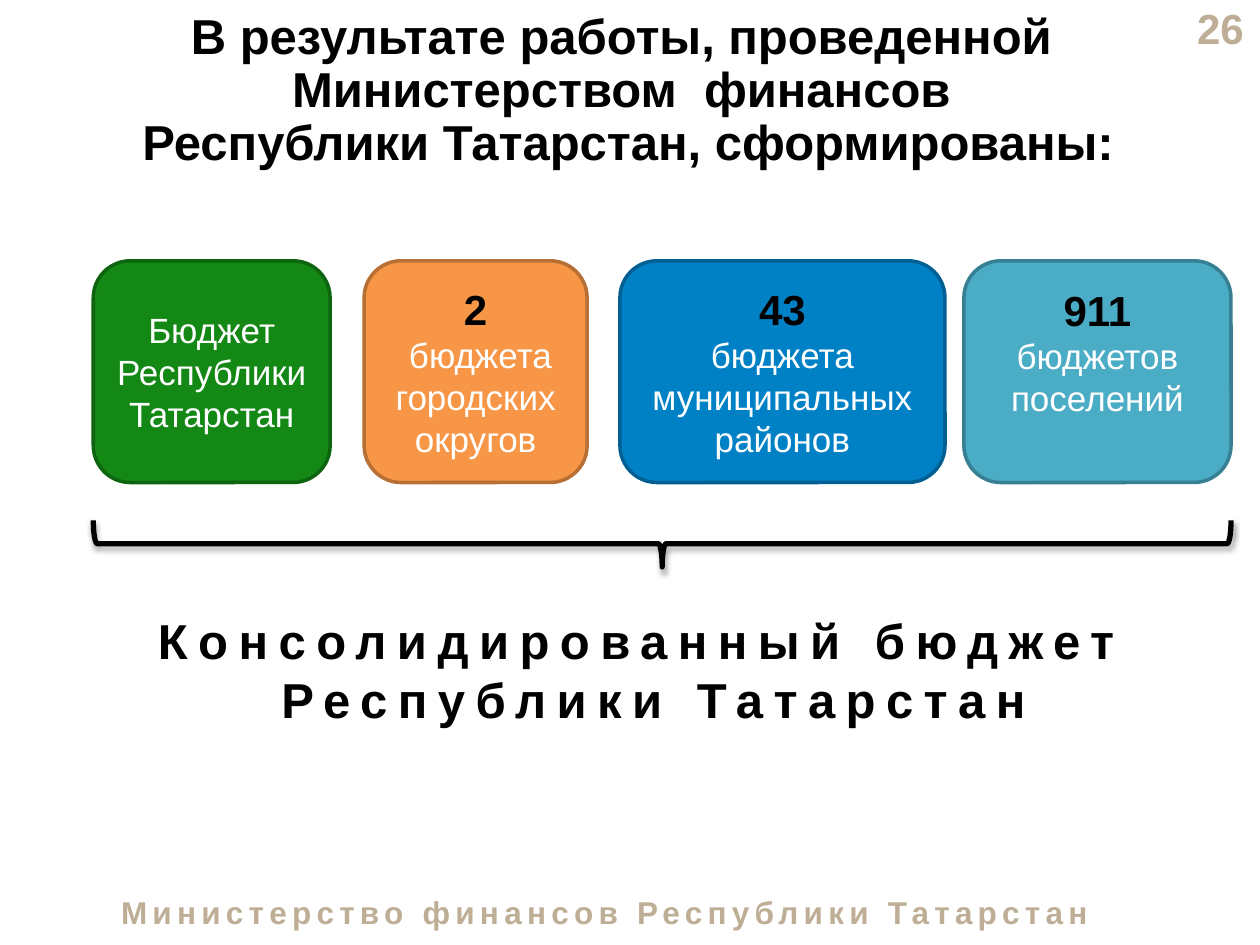
import pptx
import pptx.util
import pptx.dml.color
import pptx.enum.shapes
import pptx.enum.text
from lxml import etree

Inches = pptx.util.Inches
Pt = pptx.util.Pt
RGBColor = pptx.dml.color.RGBColor
Shape = pptx.enum.shapes.MSO_SHAPE
Align = pptx.enum.text.PP_ALIGN
Anchor = pptx.enum.text.MSO_ANCHOR

BLACK = RGBColor(0x00, 0x00, 0x00)
WHITE = RGBColor(0xFF, 0xFF, 0xFF)
SAND = RGBColor(0xBF, 0xAE, 0x96)
GREEN = RGBColor(0x13, 0x88, 0x15)
DARK_GREEN = RGBColor(0x0E, 0x65, 0x10)
ORANGE = RGBColor(0xF7, 0x96, 0x46)
DARK_ORANGE = RGBColor(0xB7, 0x6F, 0x34)
BLUE = RGBColor(0x00, 0x81, 0xC5)
DARK_BLUE = RGBColor(0x00, 0x5F, 0x92)
TEAL = RGBColor(0x4B, 0xAC, 0xC6)
DARK_TEAL = RGBColor(0x37, 0x7F, 0x92)

# Content
PAGE_NUMBER = "26"
FOOTER = "Министерство финансов Республики Татарстан"
TITLE = ("В результате работы, проведенной \nМинистерством  финансов \n"
         "Республики Татарстан, сформированы:")
TOTAL = "Консолидированный бюджет \nРеспублики Татарстан"

# Budgets: count, label, left, width, fill, outline, bottom margin
BUDGETS = [
    ("", "Бюджет Республики Татарстан", 0.74, 1.88, GREEN, DARK_GREEN, 0.05),
    ("2", " бюджета\nгородских округов", 2.89, 1.77, ORANGE, DARK_ORANGE, 0.05),
    ("43", "бюджета\nмуниципальных районов", 4.92, 2.58, BLUE, DARK_BLUE, 0.05),
    ("911", "бюджетов\nпоселений", 7.65, 2.12, TEAL, DARK_TEAL, 0.37),
]
BUDGET_TOP, BUDGET_HEIGHT = 2.07, 1.76
BRACE_TOP, BRACE_DEPTH = 4.13, 0.37

SHADOW = """<a:effectLst xmlns:a="http://schemas.openxmlformats.org/drawingml/2006/main">
<a:outerShdw blurRad="39370" dist="22860" dir="5400000" rotWithShape="0">
<a:srgbClr val="000000"><a:alpha val="35000"/></a:srgbClr></a:outerShdw></a:effectLst>"""


def write(paragraph, text, size=20, color=BLACK, bold=True, spacing=0,
          align=Align.CENTER, line_spacing=None):
    paragraph.alignment = align
    if line_spacing:
        paragraph.line_spacing = line_spacing
    for index, line in enumerate(text.split("\n")):
        if index:
            paragraph.add_line_break()
        run = paragraph.add_run()
        run.text = line
        run.font.name = "Arial"
        run.font.size = Pt(size)
        run.font.bold = bold
        run.font.color.rgb = color
        if spacing:
            run.font._element.set("spc", str(spacing * 100))


def add_text(slide, text, left, top, width, height, wrap=True,
             anchor=Anchor.TOP, **text_format):
    box = slide.shapes.add_textbox(Inches(left), Inches(top), Inches(width), Inches(height))
    box.text_frame.word_wrap = wrap
    box.text_frame.vertical_anchor = anchor
    write(box.text_frame.paragraphs[0], text, **text_format)


def add_budget(slide, count, label, left, width, fill, outline, bottom_margin):
    shape = slide.shapes.add_shape(Shape.ROUNDED_RECTANGLE, Inches(left), Inches(BUDGET_TOP),
                                   Inches(width), Inches(BUDGET_HEIGHT))
    shape.shadow.inherit = False
    shape.fill.solid()
    shape.fill.fore_color.rgb = fill
    shape.line.color.rgb = outline
    shape.line.width = Pt(2)
    frame = shape.text_frame
    frame.word_wrap = True
    frame.vertical_anchor = Anchor.MIDDLE
    frame.margin_bottom = Inches(bottom_margin)
    paragraph = frame.paragraphs[0]
    if count:
        write(paragraph, count, size=24)
        paragraph = frame.add_paragraph()
    write(paragraph, label, color=WHITE, bold=False)


def add_brace(slide, left, right):
    # A right brace turned a quarter so that it opens upwards
    length = right - left
    shape = slide.shapes.add_shape(
        Shape.RIGHT_BRACE,
        Inches((left + right - BRACE_DEPTH) / 2),
        Inches(BRACE_TOP + (BRACE_DEPTH - length) / 2),
        Inches(BRACE_DEPTH), Inches(length))
    shape.rotation = 90
    shape.fill.background()
    shape.line.color.rgb = BLACK
    shape.line.width = Pt(3)
    shape._element.spPr.append(etree.fromstring(SHADOW))


def main():
    presentation = pptx.Presentation()
    presentation.slide_width = Inches(10)
    presentation.slide_height = Inches(7.5)
    slide = presentation.slides.add_slide(presentation.slide_layouts[6])

    # Page number and footer
    add_text(slide, PAGE_NUMBER, 9.33, 0.05, 0.64, 0.34, anchor=Anchor.MIDDLE,
             size=24, color=SAND, align=Align.RIGHT)
    add_text(slide, FOOTER, 0.56, 7.04, 8.48, 0.4, size=18, color=SAND, spacing=3)

    # Budgets, gathered by the brace into the total
    for budget in BUDGETS:
        add_budget(slide, *budget)
    first_left = BUDGETS[0][2]
    last_right = BUDGETS[-1][2] + BUDGETS[-1][3]
    add_brace(slide, first_left, last_right)
    add_text(slide, TOTAL, 1.11, 4.8, 8.16, 1.04, wrap=False, size=28, spacing=6)

    # Title
    add_text(slide, TITLE, 0.56, 0.05, 8.85, 1.57, size=28, line_spacing=0.9)

    presentation.save("out.pptx")


if __name__ == "__main__":
    main()
